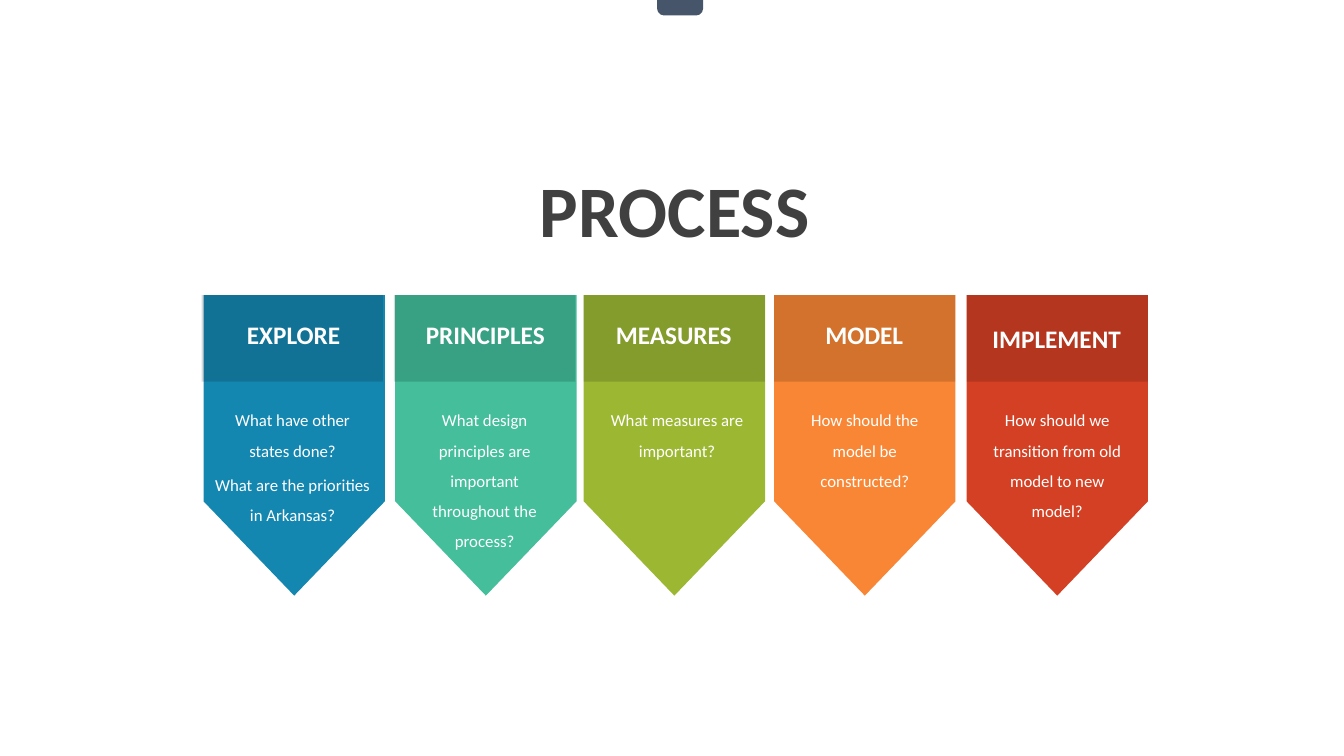
"""Build a slide with five process steps in coloured arrows."""
from lxml import etree
from pptx import Presentation
from pptx.dml.color import RGBColor
from pptx.enum import shapes, text
from pptx.oxml import ns
from pptx.util import Cm, Pt

WHITE = RGBColor(0xFF, 0xFF, 0xFF)
BLACK = RGBColor(0x00, 0x00, 0x00)
GREY = RGBColor(0x40, 0x40, 0x40)
SLATE = RGBColor(0x46, 0x55, 0x6A)
BLUE = RGBColor(0x14, 0x87, 0xB1)
GREEN = RGBColor(0x44, 0xBE, 0x9B)
LIME = RGBColor(0x9C, 0xB8, 0x33)
ORANGE = RGBColor(0xF9, 0x86, 0x34)
RED = RGBColor(0xD4, 0x40, 0x24)
KIND = shapes.MSO_SHAPE
WIDE = 4.57
TOP = 7.44

STEPS = [
    ("EXPLORE", BLUE, 5.13, 5.08, 8.0, (5.28, 4.19),
     ["What have other states done?", "What are the priorities in Arkansas?"]),
    ("PRINCIPLES", GREEN, 9.96, 9.93, 8.0, (10.31, 3.81),
     ["What design principles are important throughout the process?"]),
    ("MEASURES", LIME, 14.71, 14.71, 8.0, (15.16, 3.81),
     ["What measures are important?"]),
    ("MODEL", ORANGE, 19.51, 19.51, 8.0, (19.89, 3.81),
     ["How should the model be constructed?"]),
    ("IMPLEMENT", RED, 24.36, 24.36, 8.1, (24.74, 3.81),
     ["How should we transition from old model to new model?"]),
]


def block(slide, kind, box, color, adjust=(), alpha=None):
    """Add a filled shape without line or shadow."""
    shape = slide.shapes.add_shape(kind, *map(Cm, box))
    shape.shadow.inherit = False
    shape.line.fill.background()
    shape.fill.solid()
    shape.fill.fore_color.rgb = color
    for index, value in enumerate(adjust):
        shape.adjustments[index] = value
    if alpha is not None:
        tint = shape.fill._xPr.find(".//" + ns.qn("a:srgbClr"))
        etree.SubElement(tint, ns.qn("a:alpha"), val=str(alpha * 1000))


def label(slide, box, lines, size, color=WHITE, bold=False, pitch=1.0,
          pad=(0.1, 0.05), anchor=text.MSO_ANCHOR.TOP):
    """Add centred text, one paragraph for each line."""
    frame = slide.shapes.add_textbox(*map(Cm, box)).text_frame
    side, edge = map(Cm, pad)
    look = {"word_wrap": True, "vertical_anchor": anchor,
            "margin_left": side, "margin_right": side,
            "margin_top": edge, "margin_bottom": edge}
    for name, value in look.items():
        setattr(frame, name, value)
    for index, line in enumerate(lines):
        para = frame.add_paragraph() if index else frame.paragraphs[0]
        para.alignment = text.PP_ALIGN.CENTER
        para.line_spacing = pitch
        para.space_before = Pt(3 if index else 0)
        run = para.add_run()
        run.text = line
        for name, value in {"name": "Calibri", "size": Pt(size),
                            "bold": bold}.items():
            setattr(run.font, name, value)
        run.font.color.rgb = color


def step(slide, name, color, left, band, top, body, lines):
    """Add an arrow with its shaded heading and its questions."""
    block(slide, KIND.DOWN_ARROW, (left, TOP, WIDE, 7.57), color, (1, 0.52))
    block(slide, KIND.RECTANGLE, (band, TOP, WIDE, 2.18), BLACK, alpha=15)
    label(slide, (left + 0.25, top, 4.04, 1.17), [name], 18, bold=True)
    start, width = body
    label(slide, (start, 10.03, width, 3.71), lines, 12, pitch=1.5)


def main():
    """Build and save the slide."""
    deck = Presentation()
    deck.slide_width, deck.slide_height = Cm(33.87), Cm(19.05)
    slide = deck.slides.add_slide(deck.slide_layouts[6])
    block(slide, KIND.ROUNDED_RECTANGLE, (16.56, -0.41, 1.16, 0.8), SLATE,
          (0.22,))
    label(slide, (5.84, 4.04, 22.33, 2.44), ["PROCESS"], 51.8, GREY, True,
          pad=(0, 0.28), anchor=text.MSO_ANCHOR.MIDDLE)
    for item in STEPS:
        step(slide, *item)
    deck.save("out.pptx")


if __name__ == "__main__":
    main()
